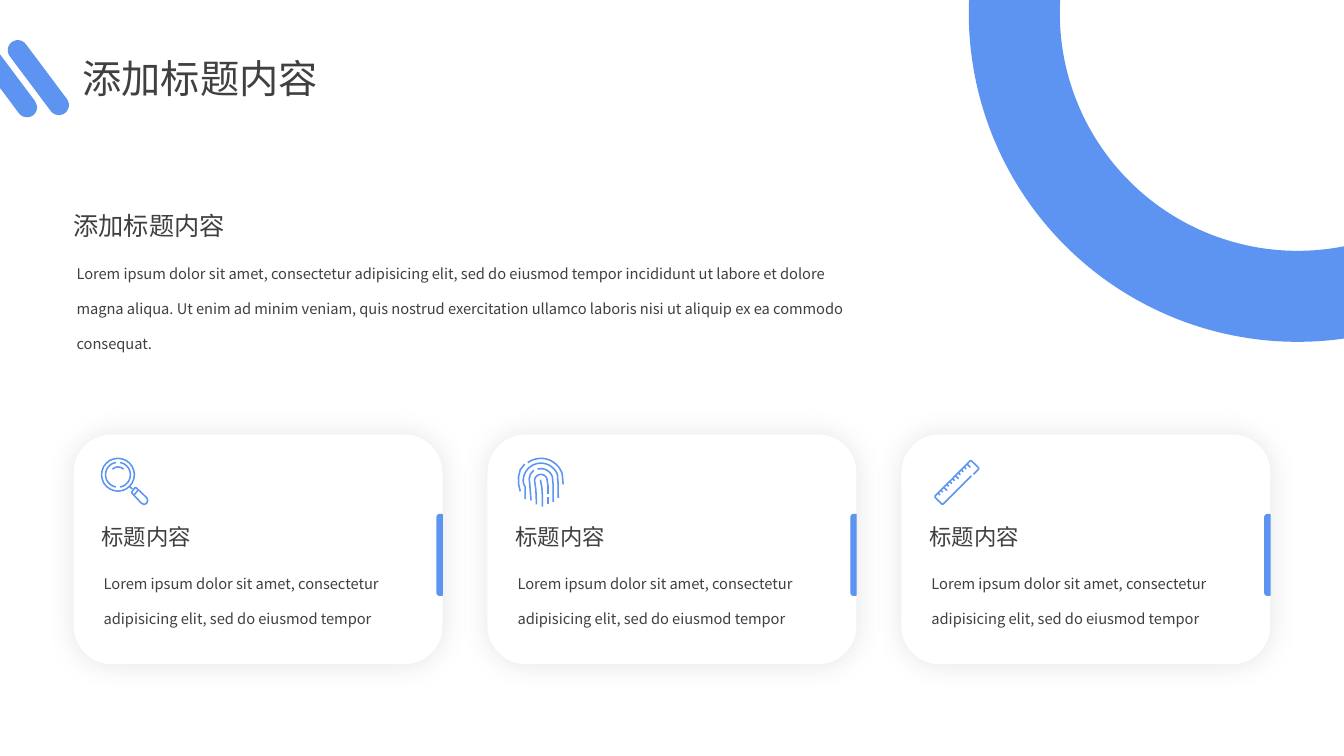
"""Build a slide with a title, an introduction and three icon cards."""
from math import cos, radians, sin

from lxml import etree
from pptx import Presentation
from pptx.dml.color import RGBColor
from pptx.enum.shapes import MSO_SHAPE
from pptx.enum.text import MSO_ANCHOR, MSO_AUTO_SIZE, PP_ALIGN
from pptx.oxml.ns import qn
from pptx.util import Inches, Pt

ROUNDED = MSO_SHAPE.ROUNDED_RECTANGLE
TAB = MSO_SHAPE.ROUND_2_SAME_RECTANGLE
RING = MSO_SHAPE.FLOWCHART_CONNECTOR
TOP = MSO_ANCHOR.TOP
NO_FIT = MSO_AUTO_SIZE.NONE
LEFT, CENTER = PP_ALIGN.LEFT, PP_ALIGN.CENTER
FONT = "Noto Sans CJK SC"
BLUE, WHITE, GREY = "5D94F1", "FFFFFF", "404040"
CARD_LEFT, CARD_TOP, CARD_PITCH = 0.73, 4.31, 4.105
CARD_WIDTH, CARD_HEIGHT = 3.66, 2.28
TAB_LENGTH, TAB_DEPTH = 0.8, 0.05


def paint(shape, fill=None, line=None, width=1):
    """Give a shape its fill and line without a shadow."""
    shape.shadow.inherit = False
    for part, color in ((shape.fill, fill), (shape.line.fill, line)):
        if color:
            part.solid()
            part.fore_color.rgb = RGBColor.from_string(color)
        else:
            part.background()
    if line:
        shape.line.width = Pt(width)


def write_text(shape, text, size, spacing=1, align=LEFT, inset=None):
    """Write one paragraph of grey text into a shape."""
    frame = shape.text_frame
    frame.word_wrap = True
    frame.auto_size = NO_FIT
    frame.vertical_anchor = TOP
    if inset is not None:
        frame.margin_left = frame.margin_right = inset
        frame.margin_top = frame.margin_bottom = inset
    paragraph = frame.paragraphs[0]
    paragraph.alignment = align
    paragraph.line_spacing = spacing
    run = paragraph.add_run()
    run.text = text
    run.font.size = Pt(size)
    run.font.name = FONT
    run.font.color.rgb = RGBColor.from_string(GREY)
    etree.SubElement(run.font._element, qn("a:ea"), typeface=FONT)


presentation = Presentation()
presentation.slide_width, presentation.slide_height = Inches(13.33), Inches(7.5)
slide = presentation.slides.add_slide(presentation.slide_layouts[5])
shapes = slide.shapes

heading = shapes.title
heading.left, heading.top = Inches(0.62), Inches(0.49)
heading.width, heading.height = Inches(2.73), Inches(0.67)
write_text(heading, "添加标题内容", 28, align=CENTER)

for left, top, length in ((-0.4, 0.68, 0.91), (-0.06, 0.67, 0.88)):
    slash = shapes.add_shape(ROUNDED, Inches(left), Inches(top), Inches(length), Inches(0.2))
    slash.adjustments[0] = 0.5
    slash.rotation = 53.2
    paint(slash, BLUE)

ring = shapes.add_shape(RING, Inches(10.06), Inches(-2.68), Inches(5.62), Inches(5.62))
paint(ring, line=BLUE, width=65)

subheading = shapes.add_textbox(Inches(0.63), Inches(2.04), Inches(2.95), Inches(0.4))
write_text(subheading, "添加标题内容", 18)
introduction = shapes.add_textbox(Inches(0.76), Inches(2.45), Inches(7.63), Inches(1.46))
write_text(
    introduction,
    "Lorem ipsum dolor sit amet, consectetur adipisicing elit, sed do eiusmod tempor "
    "incididunt ut labore et dolore magna aliqua. Ut enim ad minim veniam, quis nostrud "
    "exercitation ullamco laboris nisi ut aliquip ex ea commodo consequat.",
    10.5, spacing=2, inset=0,
)

ruler_edge = []
for tick in range(1, 12):
    x, y = 15 + 28.75 * tick, 360 - 28.75 * tick
    depth = 30 if tick % 4 == 3 else 18
    ruler_edge += [(x, y), (x + depth, y + depth), (x, y)]

magnifier = [
    ([], 163, 0, 360, []),
    ([], 123, -80, 80, []),
    ([], 123, 100, 260, []),
    ([], 77, -135, -45, []),
    ([(297, 287), (322, 312)], 0, 0, 0, []),
    ([(342, 368), (378, 325)], 0, 0, 0, []),
    ([(318, 340), (350, 298), (365, 302), (465, 398), (475, 425), (465, 453),
      (440, 465), (412, 452), (318, 352), (318, 340)], 0, 0, 0, []),
]
fingerprint = [
    ([], 222, -126, -20, [(470, 200), (475, 265)]),
    ([(95, 65), (50, 120), (32, 195), (35, 270), (50, 335)], 0, 0, 0, []),
    ([(98, 412), (98, 290)], 175, -190, -20, [(425, 260), (427, 400)]),
    ([], 120, -106, -20, [(375, 260), (377, 440)]),
    ([(185, 125), (150, 165), (139, 210), (145, 270), (157, 425)], 0, 0, 0, []),
    ([(211, 465), (205, 320)], 63, -180, -20, [(325, 280), (325, 360)]),
    ([(325, 395), (325, 465)], 0, 0, 0, []),
    ([(250, 220), (265, 300), (270, 390), (270, 485)], 0, 0, 0, []),
]
ruler = [
    ([(375, 160), (95, 440), (80, 440), (14, 374), (14, 360)] + ruler_edge
     + [(360, 12), (375, 12), (446, 80), (446, 95), (395, 145)], 0, 0, 0, []),
]
cards = (
    (0.99, 4.54, (180, 170), magnifier),
    (5.11, 4.54, (255, 230), fingerprint),
    (9.26, 4.56, (0, 0), ruler),
)

for column, (icon_left, icon_top, (center_x, center_y), strokes) in enumerate(cards):
    left = CARD_LEFT + column * CARD_PITCH
    card = shapes.add_shape(
        ROUNDED, Inches(left), Inches(CARD_TOP), Inches(CARD_WIDTH), Inches(CARD_HEIGHT))
    paint(card, WHITE)
    effects = card._element.spPr.find(qn("a:effectLst"))
    glow = etree.SubElement(
        effects, qn("a:outerShdw"), blurRad=str(Pt(20)), dist="0", algn="ctr", rotWithShape="0")
    tone = etree.SubElement(glow, qn("a:srgbClr"), val="000000")
    etree.SubElement(tone, qn("a:alpha"), val="9000")

    icon = None
    for before, radius, start, end, after in strokes:
        arc = [
            (center_x + radius * cos(radians(start + (end - start) * step / 24)),
             center_y + radius * sin(radians(start + (end - start) * step / 24)))
            for step in range(25)
        ] if radius else []
        points = before + arc + after
        if icon is None:
            icon = shapes.build_freeform(*points[0], scale=Inches(1) / 1000)
        else:
            icon.move_to(*points[0])
        icon.add_line_segments(points[1:], close=False)
    paint(icon.convert_to_shape(Inches(icon_left), Inches(icon_top)), line=BLUE, width=1.1)

    label = shapes.add_textbox(Inches(left + 0.18), Inches(5.14), Inches(1.36), Inches(0.37))
    write_text(label, "标题内容", 16)
    detail = shapes.add_textbox(Inches(left + 0.2), Inches(5.48), Inches(3.28), Inches(0.76))
    write_text(
        detail,
        "Lorem ipsum dolor sit amet, consectetur adipisicing elit, sed do eiusmod tempor",
        10.5, spacing=2,
    )

    tab = shapes.add_shape(
        TAB, Inches(left + CARD_WIDTH - 0.03 - TAB_LENGTH / 2), Inches(5.48),
        Inches(TAB_LENGTH), Inches(TAB_DEPTH))
    tab.adjustments[0] = 0.5
    tab.rotation = 270
    paint(tab, BLUE, BLUE)

presentation.save("out.pptx")
